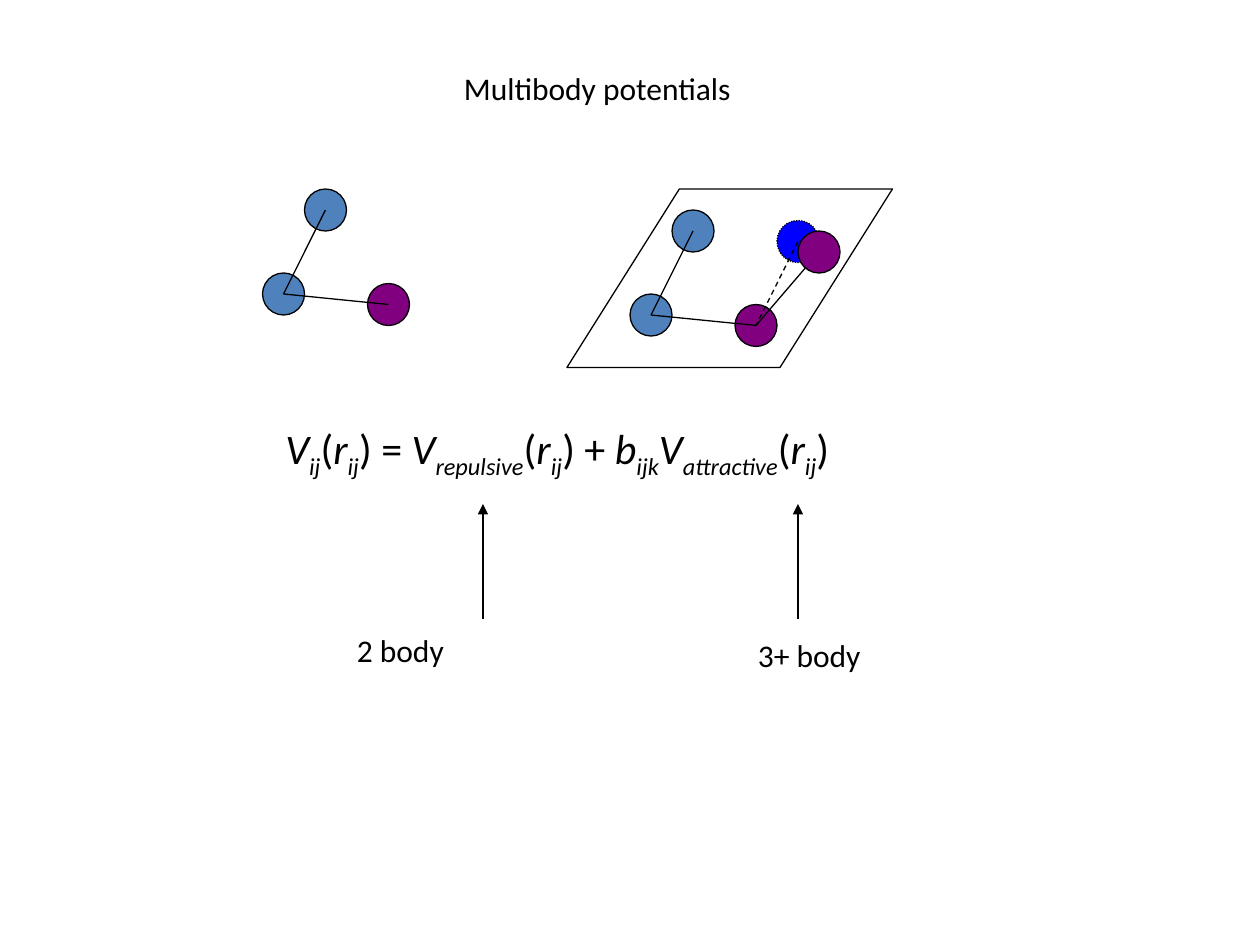
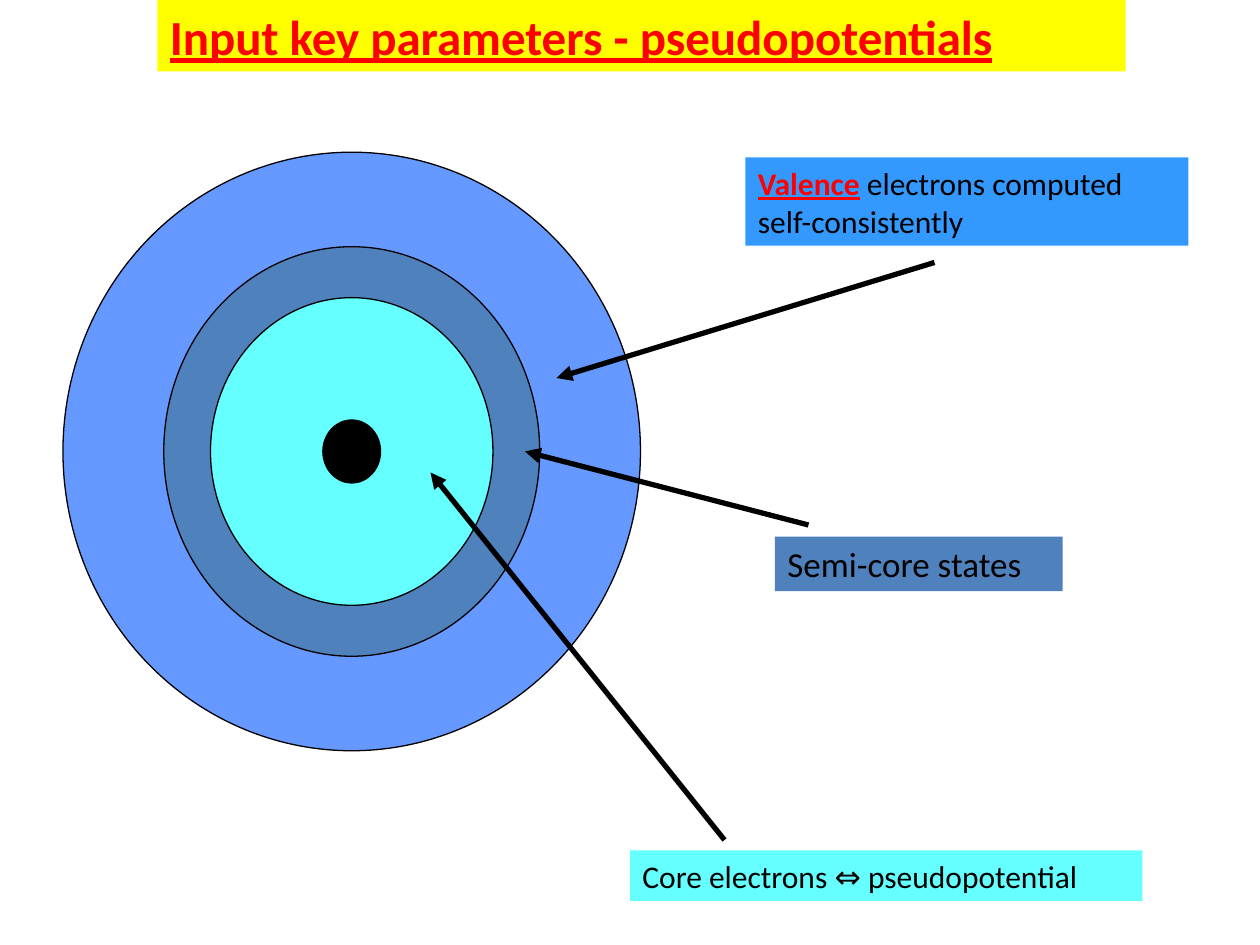
from pptx import Presentation
from pptx.dml.color import RGBColor
from pptx.enum.dml import MSO_LINE
from pptx.enum.shapes import MSO_CONNECTOR, MSO_SHAPE
from pptx.enum.text import MSO_ANCHOR, PP_ALIGN
from pptx.oxml.ns import qn
from pptx.util import Inches, Pt
from lxml.etree import SubElement

WIDE, HIGH = Inches(10), Inches(7.5)
COLS, ROWS = 120, 90
FONT = "Calibri"
BLACK, RED, STEEL, PLUM = "000000", "FF0000", "4F81BD", "800080"
BLUE, CYAN, YELLOW = "0000FF", "66FFFF", "FFFF00"
OUTER, SKY = "6699FF", "3399FF"


def color(code):
    return RGBColor.from_string(code)


def across(col):
    return round(WIDE * col / COLS)


def down(row):
    return round(HIGH * row / ROWS)


def place(x, y, w, h):
    return across(x), down(y), across(w), down(h)


def stroke(line, width=0.75, dash=None):
    line.color.rgb = color(BLACK)
    line.width = Pt(width)
    if dash:
        line.dash_style = dash


def shape(slide, kind, area, fill=None, edge=True, dash=None):
    item = slide.shapes.add_shape(kind, *place(*area))
    item.shadow.inherit = False
    if fill:
        item.fill.solid()
        item.fill.fore_color.rgb = color(fill)
    else:
        item.fill.background()
    if edge:
        stroke(item.line, dash=dash)
    else:
        item.line.fill.background()
    return item


def oval(slide, mid, w, h, fill, dash=None):
    area = mid[0] - w / 2, mid[1] - h / 2, w, h
    shape(slide, MSO_SHAPE.OVAL, area, fill, dash=dash)


def atom(slide, mid, fill, dash=None):
    oval(slide, mid, 4, 4, fill, dash)


def link(slide, start, end, width=0.75, dash=None, head=False):
    item = slide.shapes.add_connector(
        MSO_CONNECTOR.STRAIGHT, across(start[0]), down(start[1]),
        across(end[0]), down(end[1]))
    stroke(item.line, width, dash)
    props = item._element.spPr
    if head:
        SubElement(props.find(qn("a:ln")), qn("a:tailEnd"), type="triangle")
    SubElement(props, qn("a:effectLst"))


def write(item, parts, size, anchor=MSO_ANCHOR.TOP):
    frame = item.text_frame
    frame.word_wrap = True
    frame.vertical_anchor = anchor
    par = frame.paragraphs[0]
    par.alignment = PP_ALIGN.LEFT
    for text, style in parts:
        run = par.add_run()
        run.text = text
        font = run.font
        font.name, font.size = FONT, Pt(size)
        font.color.rgb = color(RED if style == "key" else BLACK)
        if style == "key":
            font.bold = font.underline = True
        if style in ("var", "sub"):
            font.italic = True
        if style == "sub":
            run._r.get_or_add_rPr().set("baseline", "-25000")


def label(slide, area, parts, size=18, anchor=MSO_ANCHOR.TOP):
    write(slide.shapes.add_textbox(*place(*area)), parts, size, anchor)


def band(slide, area, fill, parts, size=18):
    item = shape(slide, MSO_SHAPE.RECTANGLE, area, fill, edge=False)
    write(item, parts, size, MSO_ANCHOR.MIDDLE)


def bent(slide, x, y):
    base, top, side = (x, y), (x + 4, y - 8), (x + 10, y + 1)
    for mid, fill in ((top, STEEL), (side, PLUM), (base, STEEL)):
        atom(slide, mid, fill)
    for end in (top, side):
        link(slide, end, base)
    return side


def term(name, sub):
    return [(name, "var"), (sub, "sub")]


def multi(slide):
    plane = shape(slide, MSO_SHAPE.PARALLELOGRAM, (54, 18, 31, 17))
    plane.adjustments[0] = 0.63
    label(slide, (43, 6, 29, 4.8), [("Multibody potentials", "")])

    bent(slide, 27, 28)
    side = bent(slide, 62, 30)
    near, far = (78, 24), (76, 23)
    link(slide, near, side)
    atom(slide, far, BLUE, MSO_LINE.ROUND_DOT)
    link(slide, far, side, dash=MSO_LINE.DASH)
    atom(slide, near, PLUM)

    span = [("(", "")] + term("r", "ij")
    parts = (term("V", "ij") + span + [(") = ", "")]
             + term("V", "repulsive") + span + [(") + ", "")]
             + term("b", "ijk") + term("V", "attractive") + span + [(")", "")])
    label(slide, (26, 40, 63.6, 6), parts, 24, MSO_ANCHOR.MIDDLE)

    notes = ((46, 32.8, 59.5, 11.4, "2 body"), (76, 71, 60, 13.2, "3+ body"))
    for col, left, top, wide, text in notes:
        link(slide, (col, 59), (col, 48), head=True)
        label(slide, (left, top, wide, 4.8), [(text, "")])


def pseudo(slide):
    rings = ((55, 57, OUTER), (35.8, 39, STEEL),
             (26.9, 29.3, CYAN), (5.5, 6, BLACK))
    for w, h, fill in rings:
        oval(slide, (33.5, 43), w, h, fill)
    for start, end in (((69, 80), (41, 45)), ((89, 25), (53, 36)),
                       ((77, 50), (50, 43))):
        link(slide, start, end, 3, head=True)

    band(slide, (15, 0, 92.2, 6.8), YELLOW,
         [("Input key parameters - pseudopotentials", "key")], 28)
    band(slide, (71, 15, 42.2, 8.4), SKY,
         [("Valence", "key"), (" electrons computed self-consistently", "")])
    band(slide, (73.8, 51.1, 27.4, 5.2), STEEL, [("Semi-core states", "")], 20)
    band(slide, (60, 81, 48.8, 4.8), CYAN,
         [("Core electrons ⇔ pseudopotential", "")])


def main():
    deck = Presentation()
    deck.slide_width, deck.slide_height = WIDE, HIGH
    for build in (multi, pseudo):
        build(deck.slides.add_slide(deck.slide_layouts[6]))
    deck.save("out.pptx")


if __name__ == "__main__":
    main()
